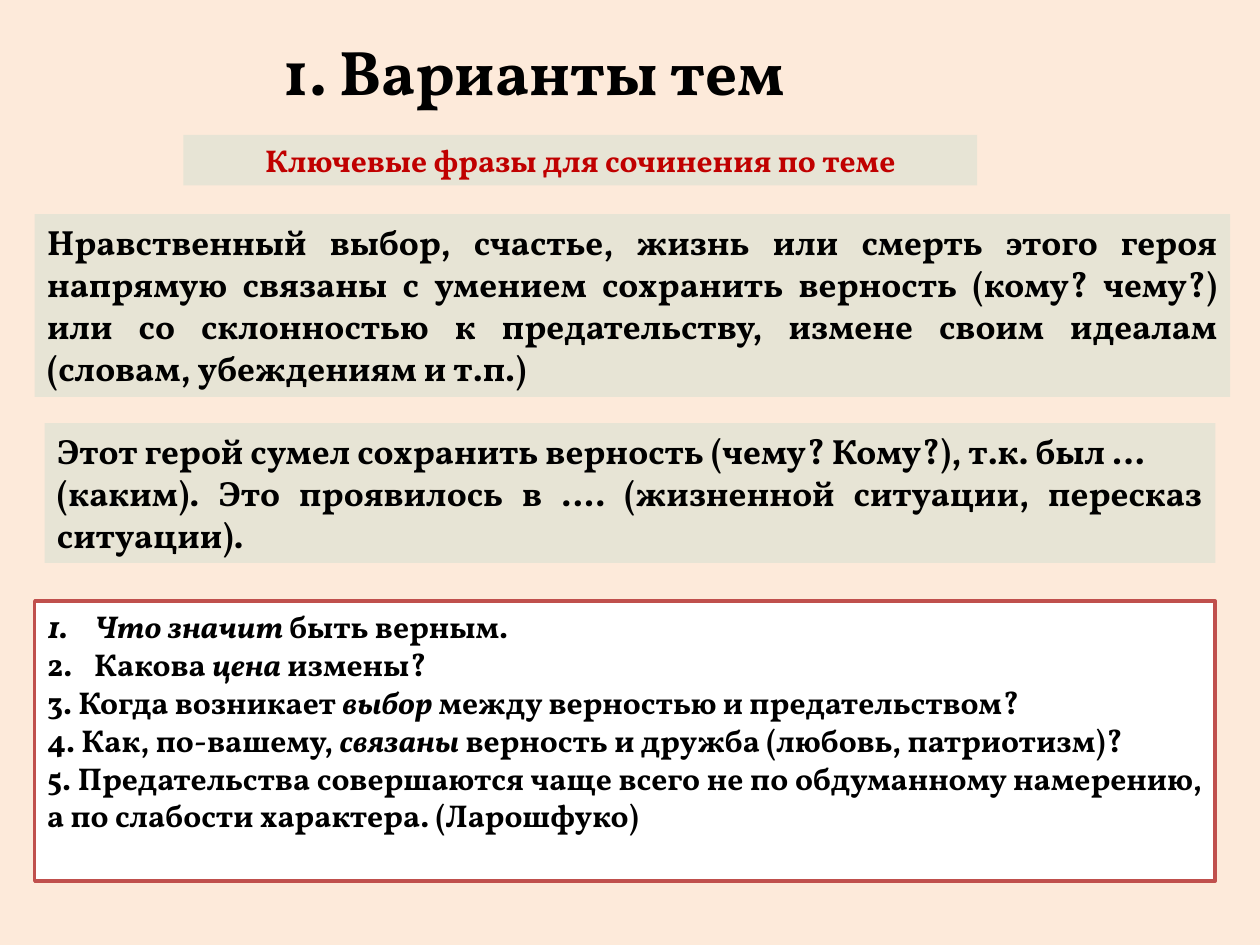
"""Build the slide with essay topics and key phrases on loyalty and betrayal."""
from dataclasses import dataclass

from lxml.etree import SubElement
from pptx import Presentation
from pptx.dml.color import RGBColor as Rgb
from pptx.enum.shapes import MSO_SHAPE as Shape
from pptx.enum.text import MSO_ANCHOR as Anchor, MSO_AUTO_SIZE as AutoSize, PP_ALIGN as Align
from pptx.oxml.ns import qn
from pptx.util import Cm, Pt


@dataclass(frozen=True)
class Theme:
    font: str = "Vollkorn"
    background: Rgb = Rgb(0xFD, 0xEA, 0xDA)
    panel: Rgb = Rgb(0xE7, 0xE4, 0xD5)
    paper: Rgb = Rgb(0xFF, 0xFF, 0xFF)
    border: Rgb = Rgb(0xC0, 0x50, 0x4D)
    accent: Rgb = Rgb(0xC0, 0x00, 0x00)
    ink: Rgb = Rgb(0x00, 0x00, 0x00)
    title_size: Pt = Pt(36)
    phrase_size: Pt = Pt(20)
    small_size: Pt = Pt(18)


theme = Theme()


def write(frame, lines, size, color, align):
    frame.word_wrap = True
    frame.auto_size = AutoSize.NONE
    frame.vertical_anchor = Anchor.TOP
    frame.text = "\n".join(line.replace("*", "") for line in lines)
    for paragraph, line in zip(frame.paragraphs, lines):
        paragraph.alignment = align
        paragraph.text = ""
        for index, part in enumerate(line.split("*")):
            if part:
                run = paragraph.add_run()
                run.text = part
                run.font.name = theme.font
                run.font.size = size
                run.font.bold = True
                run.font.italic = index % 2 == 1
                run.font.color.rgb = color


def add_panel(box, fill):
    panel = slide.shapes.add_shape(Shape.RECTANGLE, *map(Cm, box))
    panel.shadow.inherit = False
    panel.fill.solid()
    panel.fill.fore_color.rgb = fill
    panel.line.fill.background()
    return panel


deck = Presentation()
deck.slide_width, deck.slide_height = Cm(25.4), Cm(19.05)
slide = deck.slides.add_slide(deck.slide_layouts[5])
slide.background.fill.solid()
slide.background.fill.fore_color.rgb = theme.background

heading = slide.shapes.title
heading.left, heading.top, heading.width, heading.height = map(Cm, (3.3, 0.53, 15.19, 1.8))
write(heading.text_frame, ["1. Варианты тем "], theme.title_size, theme.ink, Align.CENTER)

key_phrases = [
    ((3.7, 2.72, 16, 1.02), theme.small_size, theme.accent, Align.CENTER,
     ["Ключевые фразы для сочинения по теме"]),
    ((0.7, 4.32, 24.1, 3.68), theme.phrase_size, theme.ink, Align.JUSTIFY,
     ["Нравственный выбор, счастье, жизнь или смерть этого героя напрямую связаны "
      "с умением сохранить верность (кому? чему?) или со склонностью к предательству, "
      "измене своим идеалам (словам, убеждениям и т.п.)"]),
    ((0.9, 8.53, 23.6, 2.82), theme.phrase_size, theme.ink, Align.JUSTIFY,
     ["Этот герой сумел сохранить верность (чему? Кому?), т.к. был …",
      "(каким). Это проявилось в …. (жизненной ситуации, пересказ ситуации)."]),
]
for box, size, color, align, lines in key_phrases:
    write(add_panel(box, theme.panel).text_frame, lines, size, color, align)

questions = add_panel((0.7, 12.12, 23.8, 5.64), theme.paper)
questions.line.color.rgb = theme.border
questions.line.width = Pt(2)
write(questions.text_frame, [
    "*Что значит *быть верным.",
    "Какова *цена* измены?",
    "3. Когда возникает *выбор* между верностью и предательством?",
    "4. Как, по-вашему, *связаны* верность и дружба (любовь, патриотизм)?",
    "5. Предательства совершаются чаще всего не по обдуманному намерению, "
    "а по слабости характера. (Ларошфуко)",
], theme.small_size, theme.ink, Align.JUSTIFY)

hanging = Cm(0.95)
for numbered in questions.text_frame.paragraphs[:2]:
    properties = numbered._p.get_or_add_pPr()
    properties.set("marL", str(hanging))
    properties.set("indent", str(-hanging))
    SubElement(properties, qn("a:buFont"), typeface="+mj-lt")
    SubElement(properties, qn("a:buAutoNum"), type="arabicPeriod")

deck.save("out.pptx")
